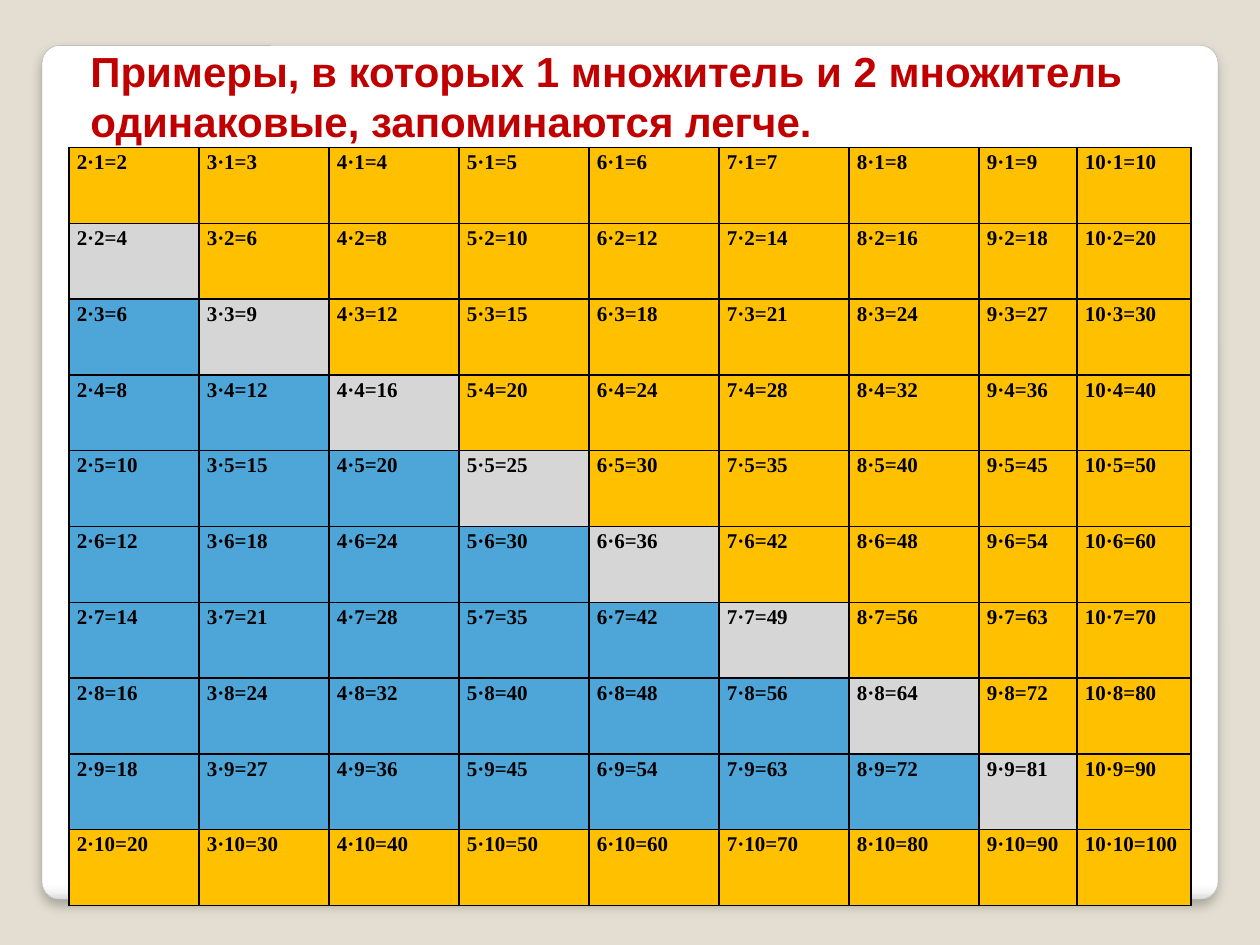
from lxml import etree
from pptx import Presentation
from pptx.dml.color import RGBColor
from pptx.enum import shapes, text
from pptx.oxml import ns
from pptx.util import Pt

COLORS = {
    "background": "E3DED1", "panel": "FFFFFF", "panel_low": "F7F7F7",
    "panel_edge": "DADADA", "outline": "A4A4A4", "title": "C00000",
    "black": "000000", "main": "FFC000", "square": "D6D6D6", "repeated": "4EA5D8",
}


def add_element(parent, tag, **attributes):
    element = etree.SubElement(parent, ns.qn(tag))
    for name, value in attributes.items():
        element.set(name, str(value))
    return element


def write_text(paragraph, content, font, size, color, spacing=None):
    run = paragraph.add_run()
    run.text = content
    run.font.name = font
    run.font.size = Pt(size)
    run.font.bold = True
    run.font.color.rgb = RGBColor.from_string(COLORS[color])
    if spacing:
        paragraph.line_spacing = spacing


presentation = Presentation()
presentation.slide_width = Pt(720)
presentation.slide_height = Pt(540)
slide = presentation.slides.add_slide(presentation.slide_layouts[6])
slide.background.fill.solid()
slide.background.fill.fore_color.rgb = RGBColor.from_string(COLORS["background"])

panel = slide.shapes.add_shape(
    shapes.MSO_SHAPE.ROUNDED_RECTANGLE, Pt(24), Pt(26), Pt(672), Pt(488))
panel.adjustments[0] = 0.021
panel.line.color.rgb = RGBColor.from_string(COLORS["outline"])
panel.line.width = Pt(0.16)
panel.fill.gradient()
panel.fill.gradient_angle = 270
stops = panel.fill._fill._gradFill.find(ns.qn("a:gsLst"))
for stop in list(stops):
    stops.remove(stop)
for position, color in ((0, "panel"), (98, "panel"), (99, "panel_low"), (100, "panel_edge")):
    stop = add_element(stops, "a:gs", pos=position * 1000)
    add_element(stop, "a:srgbClr", val=COLORS[color])
panel.shadow.inherit = False
effects = panel._element.spPr.find(ns.qn("a:effectLst"))
shadow = add_element(effects, "a:outerShdw", blurRad=Pt(6), dist=Pt(4),
                     dir=5400000, algn="ctr", rotWithShape=0)
shadow_color = add_element(shadow, "a:srgbClr", val=COLORS["black"])
add_element(shadow_color, "a:alpha", val=25000)

column_widths = [74.3] * 7 + [56, 65.2]
row_height = 43.34
frame = slide.shapes.add_table(
    10, 9, Pt(39.4), Pt(84.3), Pt(sum(column_widths)), Pt(10 * row_height))
table = frame.table
table.first_row = False
table.horz_banding = False
for column, width in zip(table.columns, column_widths):
    column.width = Pt(width)

for second, row in enumerate(table.rows, start=1):
    row.height = Pt(row_height)
    for first, cell in enumerate(row.cells, start=2):
        cell.margin_left = cell.margin_right = Pt(4.5)
        cell.margin_top = cell.margin_bottom = 0
        properties = cell._tc.get_or_add_tcPr()
        for side in ("a:lnL", "a:lnR", "a:lnT", "a:lnB"):
            border = add_element(properties, side, w=Pt(1))
            border_fill = add_element(border, "a:solidFill")
            add_element(border_fill, "a:srgbClr", val=COLORS["black"])
        if second == 10 or first > second:
            color = "main"
        elif first == second:
            color = "square"
        else:
            color = "repeated"
        cell.fill.solid()
        cell.fill.fore_color.rgb = RGBColor.from_string(COLORS[color])
        write_text(cell.text_frame.paragraphs[0], f"{first}·{second}={first * second}",
                   font="Times New Roman", size=12, color="black", spacing=1.15)

title = slide.shapes.add_textbox(Pt(44.6), Pt(22.3), Pt(616.3), Pt(65.5))
title.text_frame.word_wrap = False
title.text_frame.auto_size = text.MSO_AUTO_SIZE.SHAPE_TO_FIT_TEXT
title_lines = ("Примеры, в которых 1 множитель и 2 множитель",
               "одинаковые, запоминаются легче.")
for index, line in enumerate(title_lines):
    paragraph = title.text_frame.add_paragraph() if index else title.text_frame.paragraphs[0]
    write_text(paragraph, line, font="Arial", size=24, color="title")

presentation.save("out.pptx")
